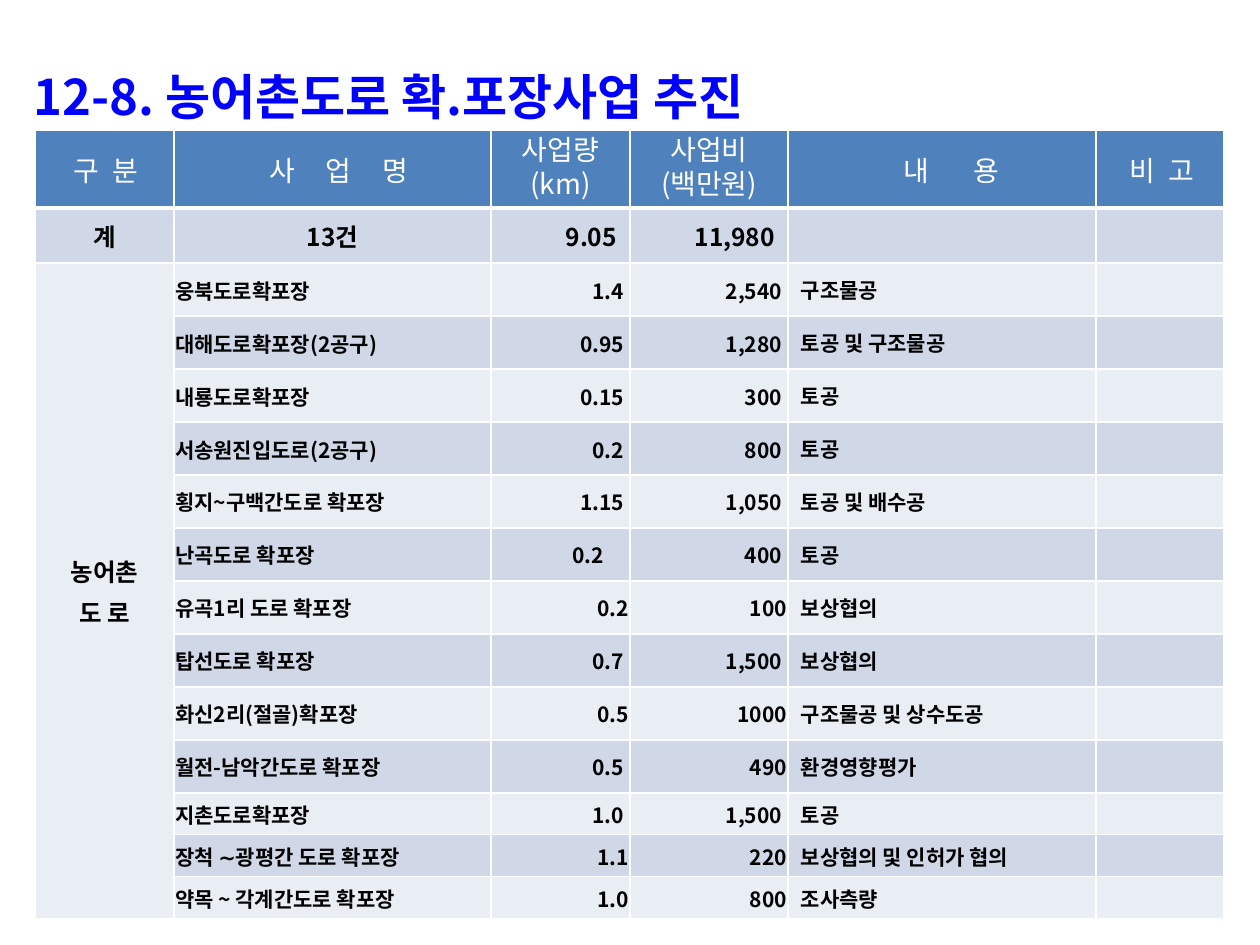
import pptx
import pptx.util
import pptx.dml.color
import pptx.enum.text
import pptx.oxml
import pptx.oxml.ns

PX = 914400 // 126
FONT = "Noto Sans CJK KR"
ALIGN = {
    "l": pptx.enum.text.PP_ALIGN.LEFT,
    "c": pptx.enum.text.PP_ALIGN.CENTER,
    "r": pptx.enum.text.PP_ALIGN.RIGHT,
}


def color(hex_code):
    return pptx.dml.color.RGBColor.from_string(hex_code)


def write(frame, text, size, hex_code, bold=True, align="l", before=0, line=None, tracking=0):
    frame.text = text
    for paragraph in frame.paragraphs:
        paragraph.alignment = ALIGN[align]
        paragraph.space_before = pptx.util.Pt(before)
        if line:
            paragraph.line_spacing = line
        for run in paragraph.runs:
            run.font.size = pptx.util.Pt(size)
            run.font.bold = bold
            run.font.name = FONT
            run.font.color.rgb = color(hex_code)
            props = run.font._element
            east_asian = pptx.oxml.parse_xml(
                f'<a:ea {pptx.oxml.ns.nsdecls("a")} typeface="{FONT}"/>')
            props.find(pptx.oxml.ns.qn("a:latin")).addnext(east_asian)
            if tracking:
                props.set("spc", str(tracking * 100))


deck = pptx.Presentation()
deck.slide_width = 1260 * PX
deck.slide_height = 945 * PX
slide = deck.slides.add_slide(deck.slide_layouts[6])

# Title
title = slide.shapes.add_textbox(21 * PX, 49 * PX, 1230 * PX, 393 * PX).text_frame
title.word_wrap = True
write(title, "12-8. 농어촌도로 확.포장사업 추진", 28, "0000FF", line=1.2)

# Header: text, letter spacing in points, line spacing
headers = [
    ("구 분", 2, None),
    ("사 업 명", 7, None),
    ("사업량\n(km)", 0, 0.7),
    ("사업비\n(백만원)", 0, 0.7),
    ("내 용", 11, None),
    ("비 고", 2, None),
]
totals = [("계", "c"), ("13건", "c"), ("9.05", "r"), ("11,980", "r")]

# Projects: name, length and its right inset, cost and its right inset, work
projects = [
    ("웅북도로확포장", "1.4", 6, "2,540", 6, "구조물공"),
    ("대해도로확포장(2공구)", "0.95", 6, "1,280", 6, "토공 및 구조물공"),
    ("내룡도로확포장", "0.15", 6, "300", 6, "토공"),
    ("서송원진입도로(2공구)", "0.2", 6, "800", 6, "토공"),
    ("횡지~구백간도로 확포장", "1.15", 6, "1,050", 6, "토공 및 배수공"),
    ("난곡도로 확포장", "0.2", 26, "400", 6, "토공"),
    ("유곡1리 도로 확포장", "0.2", 1, "100", 1, "보상협의"),
    ("탑선도로 확포장", "0.7", 6, "1,500", 6, "보상협의"),
    ("화신2리(절골)확포장", "0.5", 1, "1000", 1, "구조물공 및 상수도공"),
    ("월전-남악간도로 확포장", "0.5", 6, "490", 1, "환경영향평가"),
    ("지촌도로확포장", "1.0", 6, "1,500", 6, "토공"),
    ("장척 ∼광평간 도로 확포장", "1.1", 1, "220", 1, "보상협의 및 인허가 협의"),
    ("약목 ~ 각계간도로 확포장", "1.0", 1, "800", 1, "조사측량"),
]

# Table grid
widths = [139, 317, 139, 158, 308, 128]
heights = [78, 55] + [53] * 10 + [42] * 3
table = slide.shapes.add_table(
    len(heights), len(widths), 35 * PX, 130 * PX, sum(widths) * PX, sum(heights) * PX).table
for column, width in zip(table.columns, widths):
    column.width = width * PX
for row, height in zip(table.rows, heights):
    row.height = height * PX

# Borders, fills and insets
for r, row in enumerate(table.rows):
    for cell in row.cells:
        cell_props = cell._tc.get_or_add_tcPr()
        for side in "LRTB":
            points = 3 if r == 0 and side == "B" else 1
            cell_props.append(pptx.oxml.parse_xml(
                f'<a:ln{side} {pptx.oxml.ns.nsdecls("a")} w="{points * 12700}">'
                '<a:solidFill><a:srgbClr val="FFFFFF"/></a:solidFill>'
                f'</a:ln{side}>'))
        cell.fill.solid()
        cell.fill.fore_color.rgb = color(
            "4F81BD" if r == 0 else "D0D8E8" if r % 2 else "E9EDF4")
        cell.vertical_anchor = pptx.enum.text.MSO_ANCHOR.MIDDLE
        cell.margin_left = cell.margin_right = 13 * PX
        cell.margin_top = cell.margin_bottom = 6 * PX
        # Empty cells must not stretch the low rows
        cell.text_frame.paragraphs[0].font.size = pptx.util.Pt(12)

# Header and total rows
for c, (label, tracking, line) in enumerate(headers):
    cell = table.cell(0, c)
    cell.margin_left += pptx.util.Pt(tracking)
    write(cell.text_frame, label, 16, "FFFFFF", False, "c", 3, line, tracking)
for c, (total, align) in enumerate(totals):
    write(table.cell(1, c).text_frame, total, 14, "000000", True, align, 3)

# Category spanning all projects
category = table.cell(2, 0)
category.merge(table.cell(len(heights) - 1, 0))
write(category.text_frame, "농어촌\n도 로", 14, "000000", True, "c", 3)

# Project rows
for r, (name, length, length_inset, cost, cost_inset, work) in enumerate(projects, start=2):
    entries = [(name, "l", 1), (length, "r", length_inset), (cost, "r", cost_inset)]
    for c, (entry, align, inset) in enumerate(entries, start=1):
        cell = table.cell(r, c)
        cell.margin_left = cell.margin_top = PX
        cell.margin_right = inset * PX
        cell.margin_bottom = 0
        write(cell.text_frame, entry, 12, "000000", True, align)
    write(table.cell(r, 4).text_frame, work, 12, "000000", True, "l", 2)

deck.save("out.pptx")
